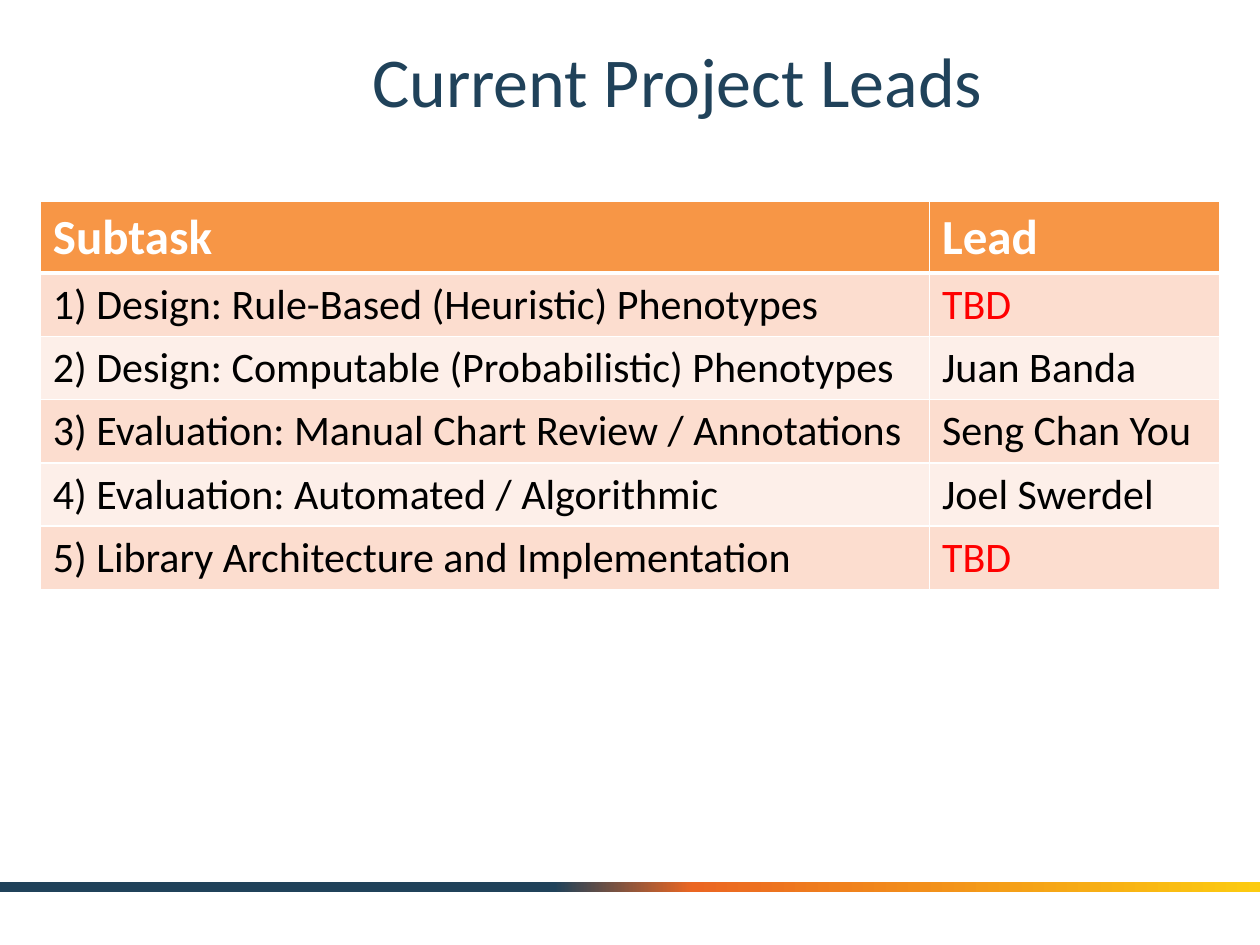
import copy
import dataclasses

import lxml.etree
import pptx
import pptx.dml.color
import pptx.enum.shapes
import pptx.enum.text
import pptx.oxml.ns
import pptx.util


@dataclasses.dataclass(frozen=True)
class Theme:
    """Colours and type sizes of the slide."""
    font: str = "Calibri"
    navy: str = "20425A"
    white: str = "FFFFFF"
    black: str = "000000"
    alert: str = "FF0000"
    header: str = "F79646"
    bands: tuple = ("FCDDCF", "FDEFE9")
    stripe: tuple = ((44, "20425A"), (55, "EB6622"), (100, "FCCB10"))
    title_size: int = 40
    header_size: int = 28
    body_size: int = 24


THEME = Theme()
WIDTH, HEIGHT = 10, 7.5
ROWS = [
    ("Subtask", "Lead"),
    ("1) Design: Rule-Based (Heuristic) Phenotypes", "TBD"),
    ("2) Design: Computable (Probabilistic) Phenotypes", "Juan Banda"),
    ("3) Evaluation: Manual Chart Review / Annotations", "Seng Chan You"),
    ("4) Evaluation: Automated / Algorithmic", "Joel Swerdel"),
    ("5) Library Architecture and Implementation", "TBD"),
]


def rgb(color):
    """Turn a hex string into a colour."""
    return pptx.dml.color.RGBColor.from_string(color)


def inches(box):
    """Turn a box in inches into lengths."""
    return [pptx.util.Inches(v) for v in box]


def write(tf, text, *, size, color, bold=False, align=None):
    """Write one formatted paragraph into a text frame."""
    p = tf.paragraphs[0]
    p.alignment = align
    r = p.add_run()
    r.text = text
    r.font.name = THEME.font
    r.font.size = pptx.util.Pt(size)
    r.font.bold = bold
    r.font.color.rgb = rgb(color)


def add_stripe(slide, box):
    """Draw the gradient stripe."""
    s = slide.shapes.add_shape(pptx.enum.shapes.MSO_SHAPE.RECTANGLE, *inches(box))
    s.shadow.inherit = False
    s.line.fill.background()
    s.fill.gradient()
    s.fill.gradient_angle = 0
    stops = s._element.spPr.find(".//" + pptx.oxml.ns.qn("a:gsLst"))
    stops.append(copy.deepcopy(stops[0]))
    for stop, (position, color) in zip(s.fill.gradient_stops, THEME.stripe):
        stop.position = position / 100
        stop.color.rgb = rgb(color)


def add_title(slide, box, text):
    """Place the centred title."""
    tf = slide.shapes.add_textbox(*inches(box)).text_frame
    tf.word_wrap = True
    tf.vertical_anchor = pptx.enum.text.MSO_ANCHOR.MIDDLE
    write(tf, text, size=THEME.title_size, color=THEME.navy,
          align=pptx.enum.text.PP_ALIGN.CENTER)


def set_borders(cell, **widths):
    """Give the sides of a cell white lines of the given widths."""
    qn = pptx.oxml.ns.qn
    tc_pr = cell._tc.get_or_add_tcPr()
    for side, width in widths.items():
        ln = lxml.etree.SubElement(tc_pr, qn(f"a:ln{side}"), w=str(pptx.util.Pt(width)))
        fill = lxml.etree.SubElement(ln, qn("a:solidFill"))
        lxml.etree.SubElement(fill, qn("a:srgbClr"), val=THEME.white)


def add_leads(slide, box, rows, shares, header_height):
    """Place the banded table of subtasks and leads."""
    left, top, width, height = box
    table = slide.shapes.add_table(len(rows), len(shares), *inches(box)).table
    for column, share in zip(table.columns, shares):
        column.width = pptx.util.Inches(width * share)
    body_height = (height - header_height) / (len(rows) - 1)
    for i, values in enumerate(rows):
        is_header = i == 0
        table.rows[i].height = pptx.util.Inches(header_height if is_header else body_height)
        for j, value in enumerate(values):
            cell = table.cell(i, j)
            set_borders(cell, L=1, R=1, T=3 if i == 1 else 1, B=3 if is_header else 1)
            cell.fill.solid()
            cell.fill.fore_color.rgb = rgb(THEME.header if is_header else THEME.bands[(i - 1) % 2])
            if is_header:
                write(cell.text_frame, value, size=THEME.header_size,
                      color=THEME.white, bold=True)
            else:
                write(cell.text_frame, value, size=THEME.body_size,
                      color=THEME.alert if value == "TBD" else THEME.black)


def main():
    """Build the slide and save it."""
    prs = pptx.Presentation()
    prs.slide_width, prs.slide_height = inches((WIDTH, HEIGHT))
    slide = prs.slides.add_slide(prs.slide_layouts[6])
    margin = 0.32
    add_stripe(slide, (0, 7, WIDTH, 0.08))
    add_title(slide, (WIDTH / 8, 0.17, 8.25, 0.92), "Current Project Leads")
    add_leads(slide, (margin, 1.6, WIDTH - 2 * margin, 3.07), ROWS,
              shares=(0.754, 0.246), header_height=0.56)
    prs.save("out.pptx")


if __name__ == "__main__":
    main()
